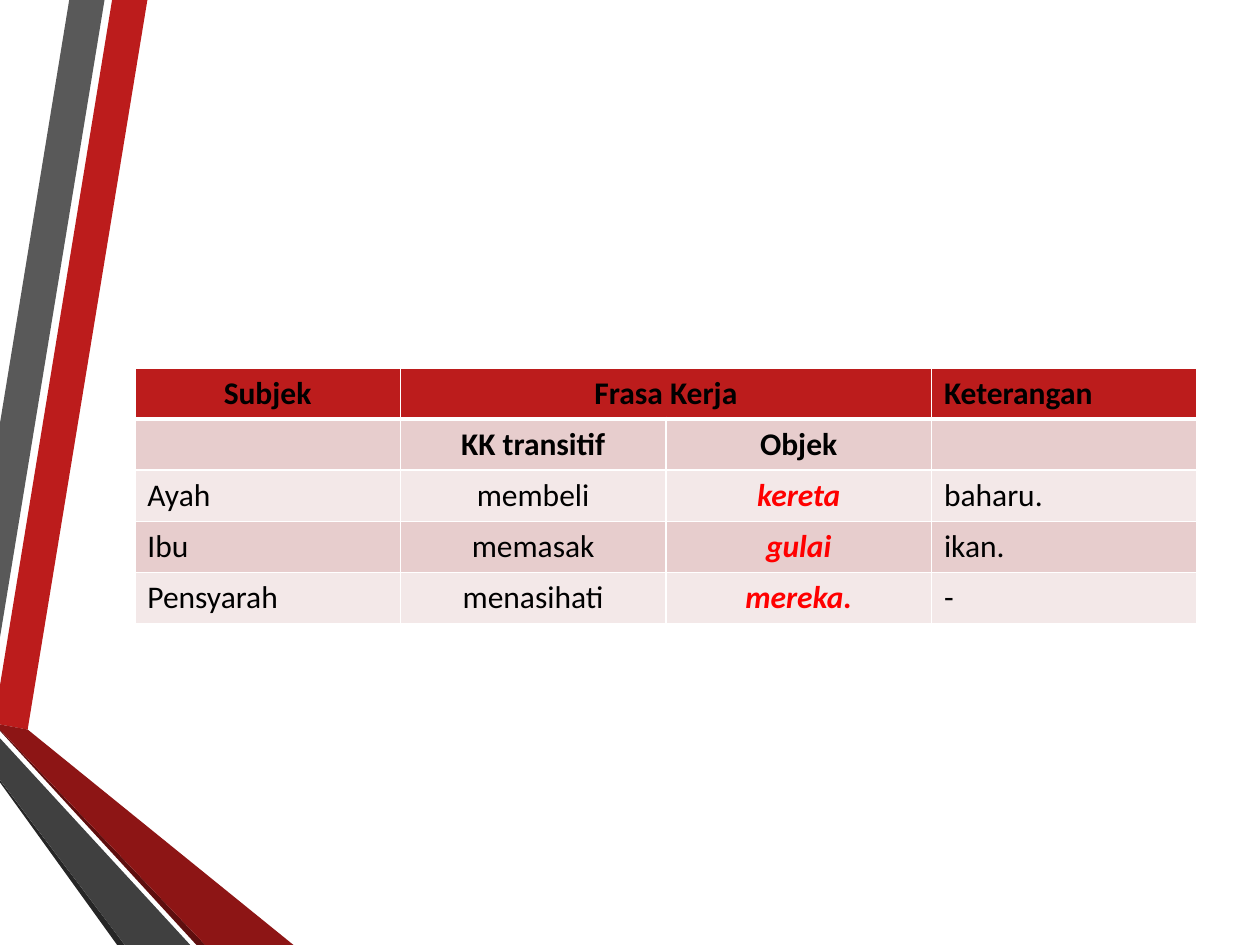
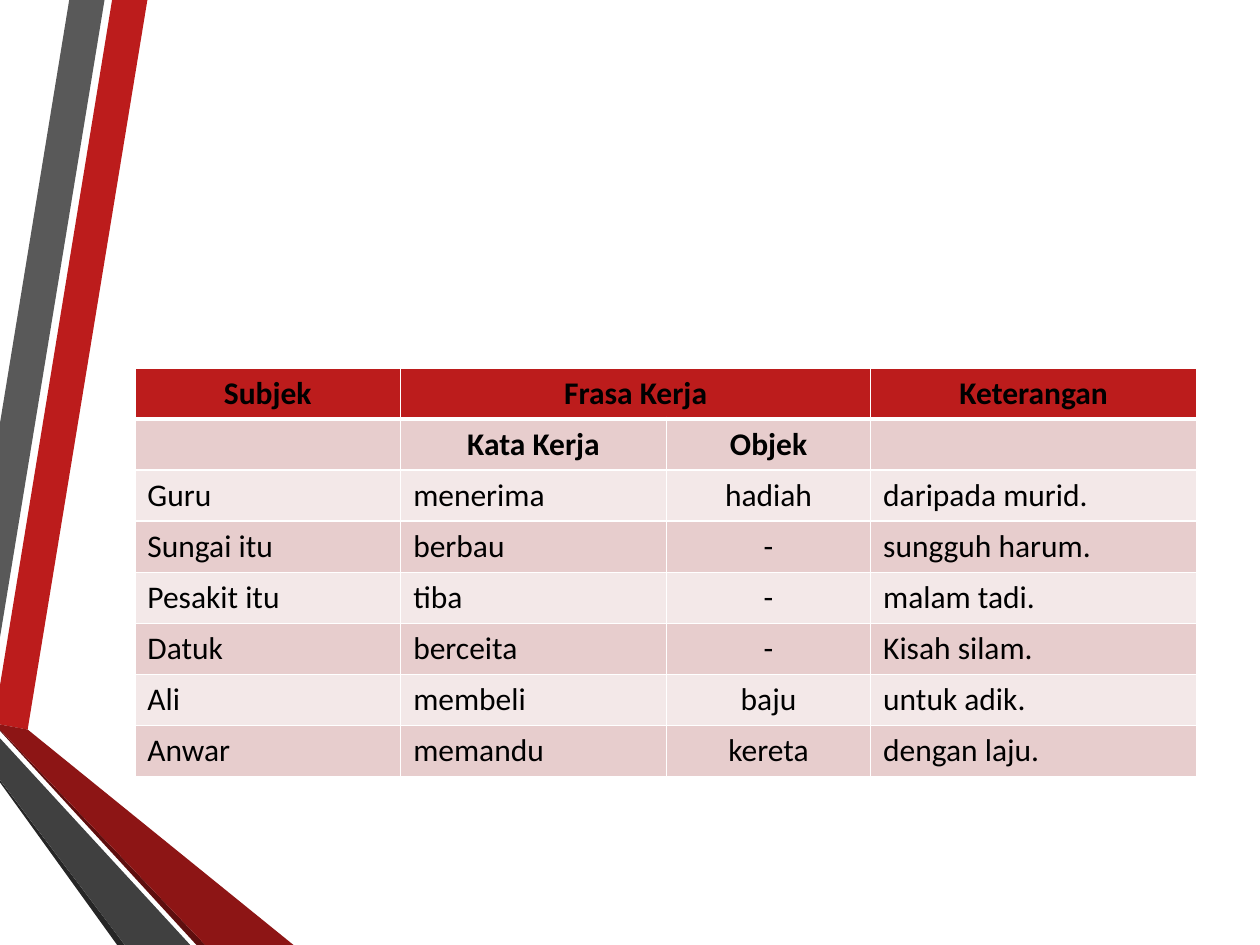
from dataclasses import dataclass

from lxml import etree
from pptx import Presentation, util as u
from pptx.dml.color import RGBColor
from pptx.enum import text
from pptx.oxml import ns


@dataclass(frozen=True)
class Theme:
    """Colours, font and sizes that the slides share."""
    red: str = "BC1C1C"
    maroon: str = "8D1515"
    wine: str = "5E0E0E"
    grey: str = "595959"
    slate: str = "404040"
    coal: str = "262626"
    rose: str = "E7CDCD"
    blush: str = "F3E8E8"
    white: str = "FFFFFF"
    ink: str = "000000"
    hot: str = "FF0000"
    font: str = "Calibri"
    size: int = 18
    thin: int = 1
    thick: int = 3


LOOK = Theme()
ALIGN = {"l": text.PP_ALIGN.LEFT, "c": text.PP_ALIGN.CENTER}
BOX = (1.07, 2.92, 8.43)

BANDS = [
    (LOOK.red, [(0, 5.44), (0, 5.75), (0.22, 5.79), (1.17, 0), (0.89, 0)]),
    (LOOK.grey, [(0.83, 0), (0.55, 0), (0, 3.36), (0, 5.06)]),
    (LOOK.coal, [(0, 6.19), (0, 6.21), (0.93, 7.5), (0.99, 7.5)]),
    (LOOK.wine, [(0, 5.79), (0, 5.8), (1.56, 7.5), (1.63, 7.5)]),
    (LOOK.maroon, [(0, 5.79), (1.63, 7.5), (2.33, 7.5), (0.22, 5.79), (0, 5.75)]),
    (LOOK.slate, [(0, 6.19), (0.99, 7.5), (1.51, 7.5), (0, 5.86)]),
]


def paint(fill, tone):
    """Give a fill one solid colour."""
    fill.solid()
    fill.fore_color.rgb = RGBColor.from_string(tone)


def write(frame, words, align="l", tone=LOOK.ink, bold=False, slant=False):
    """Put formatted words in a text frame."""
    para = frame.paragraphs[0]
    para.alignment = ALIGN[align]
    run = para.add_run()
    run.text = words
    font = run.font
    font.name, font.size = LOOK.font, u.Pt(LOOK.size)
    font.bold, font.italic = bold, slant
    font.color.rgb = RGBColor.from_string(tone)


def edge(cell, top, base):
    """Draw white borders round a cell, ahead of its fill."""
    props = cell._tc.get_or_add_tcPr()
    widths = {"lnL": LOOK.thin, "lnR": LOOK.thin, "lnT": top, "lnB": base}
    for spot, (tag, width) in enumerate(widths.items()):
        line = etree.Element(ns.qn(f"a:{tag}"), w=str(u.Pt(width)))
        fill = etree.SubElement(line, ns.qn("a:solidFill"))
        etree.SubElement(fill, ns.qn("a:srgbClr"), val=LOOK.white)
        props.insert(spot, line)


def draw_bands(slide, left=0, top=0):
    """Draw the folded ribbons from the given corner."""
    for tone, points in BANDS:
        spots = [(u.Inches(left + x), u.Inches(top + y)) for x, y in points]
        pen = slide.shapes.build_freeform(*spots[0], scale=1.0)
        pen.add_line_segments(spots[1:], close=True)
        band = pen.convert_to_shape()
        band.shadow.inherit = False
        paint(band.fill, tone)
        band.line.fill.background()


def draw_table(slide, box, cols, rows, aligns, head="cccc", hot=None):
    """Fill the box with a two-level header and banded rows."""
    left, top, width, height = map(u.Inches, box)
    grid = slide.shapes.add_table(len(rows), len(cols), left, top, width, height).table
    for col, share in zip(grid.columns, cols):
        col.width = int(width * share / sum(cols))
    for r, row in enumerate(rows):
        grid.rows[r].height = height // len(rows)
        tone = LOOK.red if r == 0 else (LOOK.blush, LOOK.rose)[r % 2]
        for c, words in enumerate(row):
            cell = grid.cell(r, c)
            paint(cell.fill, tone)
            edge(cell, LOOK.thick if r == 1 else LOOK.thin,
                 LOOK.thick if r == 0 else LOOK.thin)
            if words:
                key = r > 1 and c == hot
                write(cell.text_frame, words,
                      align=(head if r < 2 else aligns)[c],
                      tone=LOOK.hot if key else LOOK.ink,
                      bold=r < 2 or key, slant=key)
    grid.cell(0, 1).merge(grid.cell(0, 2))


def add_page(deck, **table):
    """Add a slide with ribbons and one table."""
    slide = deck.slides.add_slide(deck.slide_layouts[6])
    paint(slide.background.fill, LOOK.white)
    draw_bands(slide)
    draw_table(slide, **table)


def main():
    """Build and save the deck."""
    deck = Presentation()
    deck.slide_width, deck.slide_height = u.Inches(10), u.Inches(7.5)
    add_page(deck, box=(*BOX, 2.03), cols=[1, 1, 1, 1], aligns="lccl",
             head="cccl", hot=2, rows=[
                 ("Subjek", "Frasa Kerja", "", "Keterangan"),
                 ("", "KK transitif", "Objek", ""),
                 ("Ayah", "membeli", "kereta", "baharu."),
                 ("Ibu", "memasak", "gulai", "ikan."),
                 ("Pensyarah", "menasihati", "mereka.", "-"),
             ])
    add_page(deck, box=(*BOX, 3.24), cols=[2.11, 2.11, 1.62, 2.59],
             aligns="llcl", rows=[
                 ("Subjek", "Frasa Kerja", "", "Keterangan"),
                 ("", "Kata Kerja", "Objek", ""),
                 ("Guru", "menerima", "hadiah", "daripada murid."),
                 ("Sungai itu", "berbau", "-", "sungguh harum."),
                 ("Pesakit itu", "tiba", "-", "malam tadi."),
                 ("Datuk", "berceita", "-", "Kisah silam."),
                 ("Ali", "membeli", "baju", "untuk adik."),
                 ("Anwar", "memandu", "kereta", "dengan laju."),
             ])
    deck.save("out.pptx")


if __name__ == "__main__":
    main()
